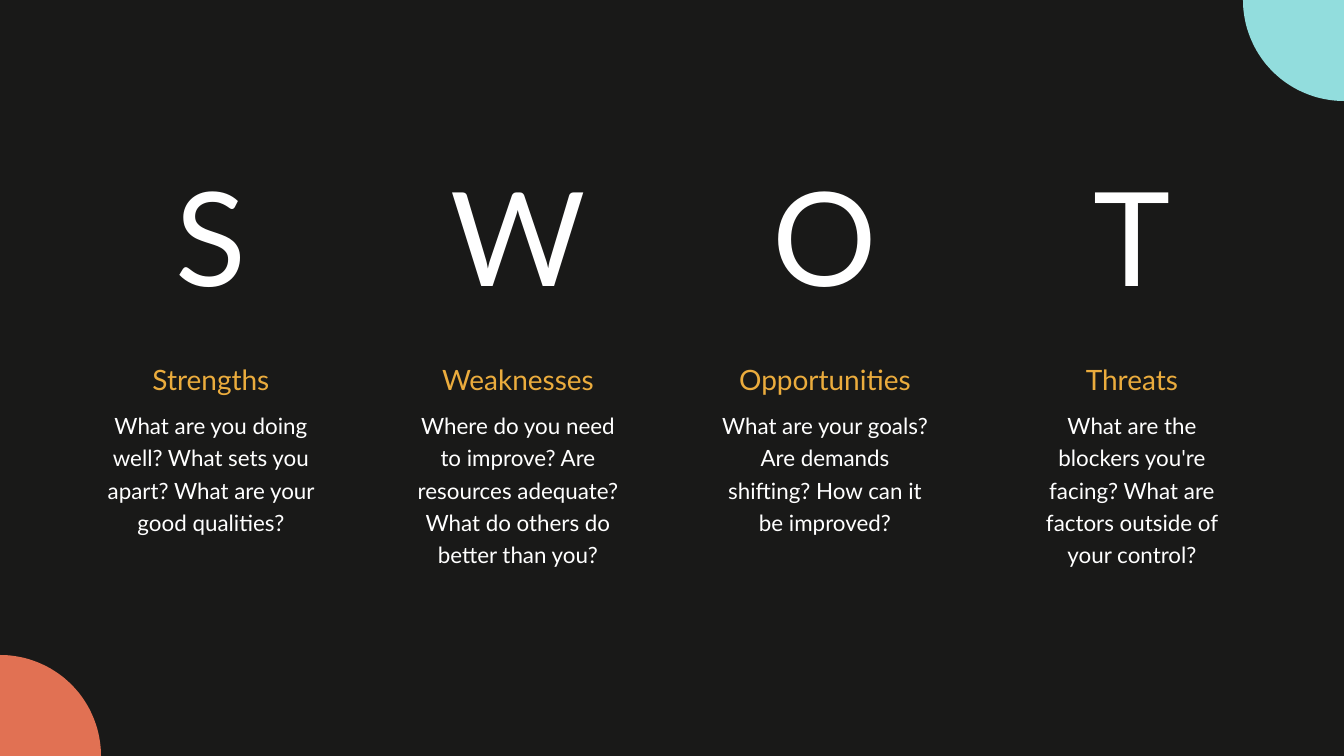
from math import cos, radians, sin

from pptx import Presentation
from pptx.dml.color import RGBColor
from pptx.enum.text import MSO_AUTO_SIZE, PP_ALIGN
from pptx.util import Pt

CENTER = PP_ALIGN.CENTER
GROW = MSO_AUTO_SIZE.SHAPE_TO_FIT_TEXT
EMU_PER_PX = 914400 / 134.4
PAGE_WIDTH, PAGE_HEIGHT = 1344, 756
COLUMN_LEFT, COLUMN_PITCH, COLUMN_WIDTH = 106, 307, 210
CORNER_RADIUS = 101

LETTER = {"size": 70, "color": "FFFFFF", "line_spacing": 1.0}
HEADING = {"size": 15, "color": "EBAC3D", "line_spacing": 1.2}
BODY = {"size": 12, "color": "FFFFFF", "line_spacing": 1.2}

COLUMNS = [
    ("S", "Strengths", 125,
     "What are you doing well? What sets you apart? What are your good qualities?"),
    ("W", "Weaknesses", 190,
     "Where do you need to improve? Are resources adequate? What do others do better than you?"),
    ("O", "Opportunities", 125,
     "What are your goals? Are demands shifting? How can it be improved?"),
    ("T", "Threats", 157,
     "What are the blockers you're facing? What are factors outside of your control?"),
]


def px(length):
    """Turn pixels into EMU."""
    return round(length * EMU_PER_PX)


def color(code):
    """Turn a hex string into a colour."""
    return RGBColor.from_string(code)


def set_attributes(target, values):
    """Set each named attribute on an object."""
    for name, value in values.items():
        setattr(target, name, value)


def add_text(shapes, left, top, height, text, style):
    """Add a centred text box of one column's width."""
    box = shapes.add_textbox(px(left), px(top), px(COLUMN_WIDTH), px(height))
    frame = box.text_frame
    set_attributes(frame, {
        "word_wrap": True, "auto_size": GROW, "margin_left": 0,
        "margin_right": 0, "margin_top": 0, "margin_bottom": 0,
    })
    para = frame.paragraphs[0]
    set_attributes(para, {"alignment": CENTER, "line_spacing": style["line_spacing"]})
    span = para.add_run()
    span.text = text
    set_attributes(span.font, {"name": "Lato", "size": Pt(style["size"])})
    span.font.color.rgb = color(style["color"])


def add_column(page, left, letter, heading, body_height, body):
    """Add a large letter with its grouped heading and questions."""
    add_text(page.shapes, left, 156, 159, letter, LETTER)
    group = page.shapes.add_group_shape()
    add_text(group.shapes, left, 407, body_height, body, BODY)
    add_text(group.shapes, left, 356, 34, heading, HEADING)


def add_quarter_circle(page, center_x, center_y, start_angle, fill):
    """Add a quarter circle around a corner of the page."""
    angles = [radians(start_angle + step) for step in range(0, 91, 2)]
    points = [(px(center_x + CORNER_RADIUS * cos(angle)),
               px(center_y + CORNER_RADIUS * sin(angle))) for angle in angles]
    builder = page.shapes.build_freeform(px(center_x), px(center_y))
    builder.add_line_segments(points, close=True)
    shape = builder.convert_to_shape()
    shape.shadow.inherit = False
    shape.fill.solid()
    shape.fill.fore_color.rgb = color(fill)
    shape.line.fill.background()


def main():
    """Build the SWOT slide and save it."""
    deck = Presentation()
    set_attributes(deck, {"slide_width": px(PAGE_WIDTH), "slide_height": px(PAGE_HEIGHT)})
    page = deck.slides.add_slide(deck.slide_layouts[6])
    page.background.fill.solid()
    page.background.fill.fore_color.rgb = color("191918")
    for index, column in enumerate(COLUMNS):
        add_column(page, COLUMN_LEFT + index * COLUMN_PITCH, *column)
    add_quarter_circle(page, PAGE_WIDTH, 0, 90, "92DDDD")
    add_quarter_circle(page, 0, PAGE_HEIGHT, 270, "E17153")
    deck.save("out.pptx")


if __name__ == "__main__":
    main()
